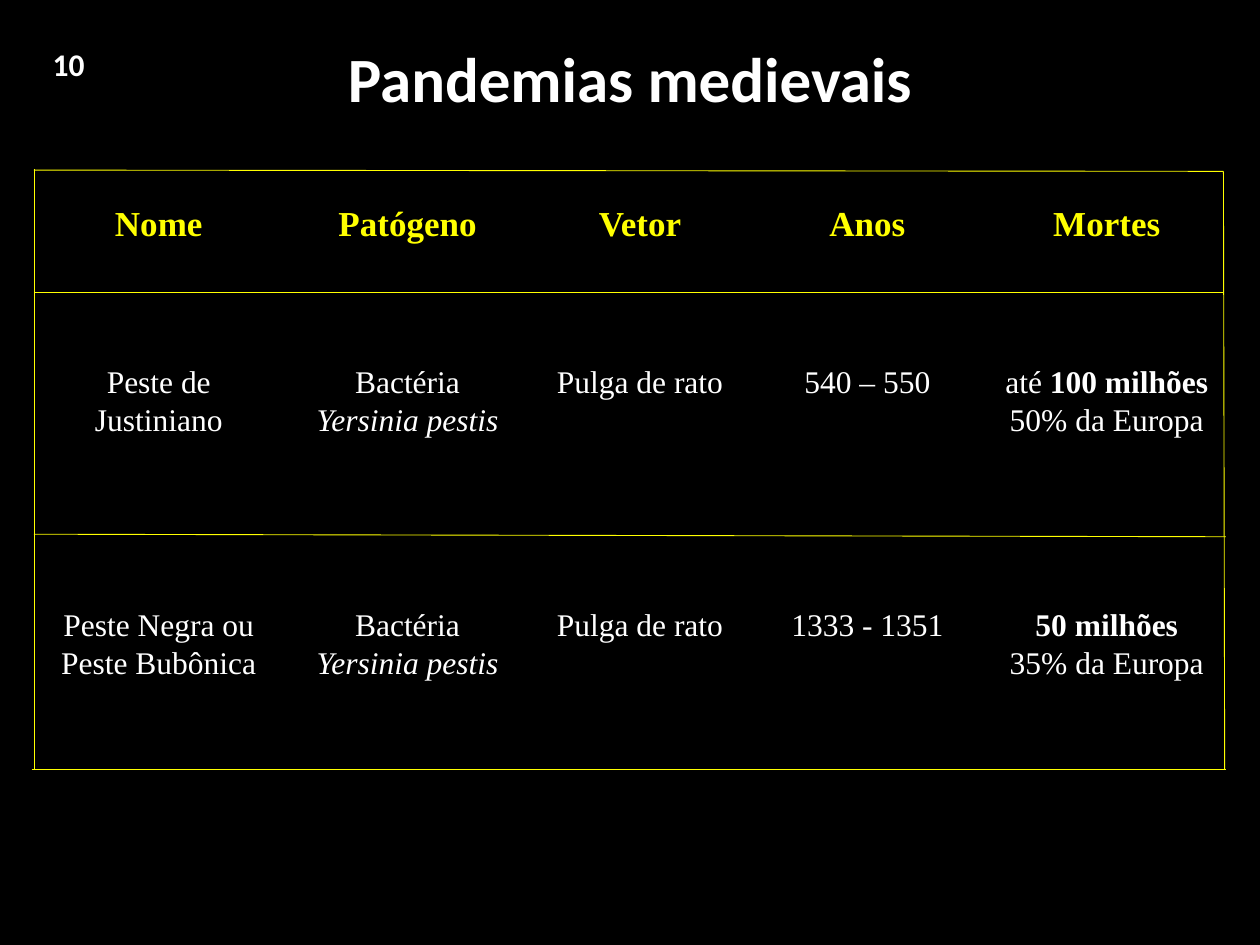
from pptx import Presentation
from pptx.dml.color import RGBColor
from pptx.enum.shapes import MSO_CONNECTOR
from pptx.enum.text import MSO_ANCHOR, MSO_AUTO_SIZE, PP_ALIGN
from pptx.oxml.ns import qn
from pptx.util import Inches, Pt
from lxml import etree

CENTER = PP_ALIGN.CENTER
BOTTOM = MSO_ANCHOR.BOTTOM
GROW = MSO_AUTO_SIZE.SHAPE_TO_FIT_TEXT
NO_FIT = MSO_AUTO_SIZE.NONE
STRAIGHT = MSO_CONNECTOR.STRAIGHT
NO_GRID_STYLE = "{2D5ABB26-0587-4C30-8999-92F81FD0307C}"
WHITE, YELLOW, BLACK = "FFFFFF", "FFFF00", "000000"
SERIF, SANS = "Times New Roman", "Calibri"


def color(hex_code):
    return RGBColor.from_string(hex_code)


def write(frame, text, font=SERIF, size=18, fill=WHITE, bold=False, spacing=None):
    """Fill a frame line by line; *word* is bold and _word_ is italic."""
    for index, line in enumerate(text.split("\n")):
        paragraph = frame.paragraphs[0] if index == 0 else frame.add_paragraph()
        paragraph.alignment = CENTER
        paragraph.space_before = Pt(0)
        if spacing:
            paragraph.line_spacing = spacing
        for strong_index, part in enumerate(line.split("*")):
            for slant_index, piece in enumerate(part.split("_")):
                if not piece:
                    continue
                run = paragraph.add_run()
                run.text = piece
                run.font.name = font
                run.font.size = Pt(size)
                run.font.color.rgb = color(fill)
                run.font.bold = bold or strong_index % 2 == 1
                run.font.italic = slant_index % 2 == 1


prs = Presentation()
prs.slide_width, prs.slide_height = Inches(10), Inches(7.5)
slide = prs.slides.add_slide(prs.slide_layouts[5])
slide.background.fill.solid()
slide.background.fill.fore_color.rgb = color(BLACK)

title = slide.shapes.title
title.left, title.top = Inches(0.75), Inches(0.2)
title.width, title.height = Inches(8.5), Inches(0.77)
title.text_frame.vertical_anchor = BOTTOM
title.text_frame.auto_size = NO_FIT
write(title.text_frame, "Pandemias medievais", font=SANS, size=36, bold=True, spacing=0.9)

# Table of pandemics
pandemics = [
    ["Nome", "Patógeno", "Vetor", "Anos", "Mortes"],
    ["Peste de Justiniano", "Bactéria\n_Yersinia pestis_", "Pulga de rato",
     "540 – 550", "até *100 milhões*\n50% da Europa"],
    ["Peste Negra ou\nPeste Bubônica", "Bactéria\n_Yersinia pestis_", "Pulga de rato",
     "1333 - 1351", "*50 milhões*\n35% da Europa"],
]
column_widths = [1.98, 1.97, 1.72, 1.89, 1.91]
row_heights = [0.95, 1.93, 2.42]
table = slide.shapes.add_table(
    len(row_heights), len(column_widths), Inches(0.27), Inches(1.6),
    Inches(sum(column_widths)), Inches(sum(row_heights))).table
table.horz_banding = False
table._tbl.tblPr.find(qn("a:tableStyleId")).text = NO_GRID_STYLE
for column, width in zip(table.columns, column_widths):
    column.width = Inches(width)
for row_index, (row, height, texts) in enumerate(zip(table.rows, row_heights, pandemics)):
    row.height = Inches(height)
    header = row_index == 0
    for cell, text in zip(row.cells, texts):
        cell.fill.background()
        cell.margin_left = cell.margin_right = Inches(0.07)
        cell.margin_top = Inches(0 if header else 0.32)
        cell.margin_bottom = 0
        write(cell.text_frame, text, size=20 if header else 18,
              fill=YELLOW if header else WHITE, bold=header, spacing=1.1)

# Hand-placed rules framing the table
rules = [
    (0.27, 1.35, 9.71, 1.36),
    (0.27, 2.32, 9.71, 2.32),
    (0.27, 4.24, 9.73, 4.26),
    (0.25, 6.11, 9.73, 6.11),
    (0.27, 1.34, 0.27, 6.11),
    (9.71, 1.36, 9.72, 6.11),
]
for ends in rules:
    rule = slide.shapes.add_connector(STRAIGHT, *[Inches(value) for value in ends])
    rule.line.color.rgb = color(YELLOW)
    rule.line.width = Pt(0.5)
    etree.SubElement(rule._element.spPr, qn("a:effectLst"))

page_number = slide.shapes.add_textbox(Inches(0.25), Inches(0.31), Inches(0.59), Inches(0.4))
page_number.text_frame.word_wrap = True
page_number.text_frame.auto_size = GROW
write(page_number.text_frame, "10", font=SANS, bold=True)

prs.save("out.pptx")
